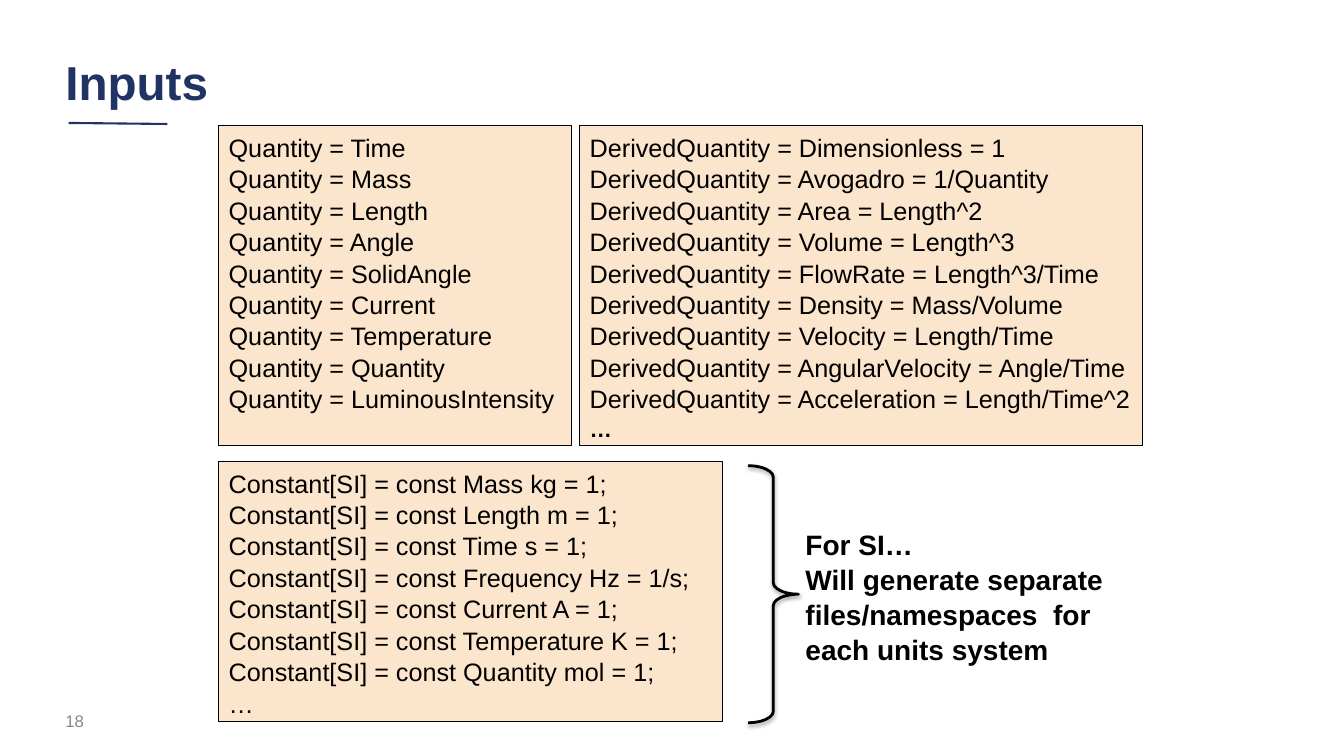
import pptx
import pptx.dml.color
import pptx.enum.shapes
import pptx.enum.text
import pptx.oxml
import pptx.oxml.ns
import pptx.util

PX = 9144
NAVY = pptx.dml.color.RGBColor(0x21, 0x32, 0x65)
PEACH = pptx.dml.color.RGBColor(0xFC, 0xE5, 0xCD)
BLACK = pptx.dml.color.RGBColor(0, 0, 0)
GRAY = pptx.dml.color.RGBColor(0x88, 0x88, 0x88)
SHAPES = pptx.enum.shapes.MSO_SHAPE
MIDDLE = pptx.enum.text.MSO_ANCHOR.MIDDLE
TOP = pptx.enum.text.MSO_ANCHOR.TOP
LINE_SPACING = 1.04
ELLIPSIS = "…"

QUANTITIES = ["Time", "Mass", "Length", "Angle", "SolidAngle", "Current",
              "Temperature", "Quantity", "LuminousIntensity"]
DERIVED_QUANTITIES = [
    "Dimensionless = 1", "Avogadro = 1/Quantity", "Area = Length^2",
    "Volume = Length^3", "FlowRate = Length^3/Time", "Density = Mass/Volume",
    "Velocity = Length/Time", "AngularVelocity = Angle/Time",
    "Acceleration = Length/Time^2"]
CONSTANTS = ["Mass kg = 1", "Length m = 1", "Time s = 1", "Frequency Hz = 1/s",
             "Current A = 1", "Temperature K = 1", "Quantity mol = 1"]
SI_NOTE = ["For SI…", "Will generate separate files/namespaces  for each units system"]


def scaled(*lengths):
    """Turn px lengths into EMU."""
    return [length * PX for length in lengths]


def write_lines(shape, lines, size, color=BLACK, bold=False, anchor=TOP, spacing=LINE_SPACING):
    """Fill a shape with one left-aligned paragraph per line."""
    frame = shape.text_frame
    frame.word_wrap = True
    frame.vertical_anchor = anchor
    frame.text = "\n".join(lines)
    for para in frame.paragraphs:
        para.alignment = pptx.enum.text.PP_ALIGN.LEFT
        para.line_spacing = spacing
        para.font.name = "Arial"
        para.font.size = pptx.util.Pt(size)
        para.font.bold = bold
        para.font.color.rgb = color
    return frame


def add_header(page, left, top, width, height):
    """Place the title and the short rule under it."""
    title = page.shapes.add_textbox(*scaled(left, top, width, height))
    write_lines(title, ["Inputs"], 34, NAVY, True, MIDDLE, 0.9)
    bottom = top + height
    rule = page.shapes.add_connector(
        pptx.enum.shapes.MSO_CONNECTOR.STRAIGHT,
        *scaled(left + 13, bottom, left + 111, bottom + 1))
    rule.line.color.rgb = NAVY
    rule.line.width = pptx.util.Pt(1.5)
    rule._element.spPr.append(pptx.oxml.parse_xml(
        f"<a:effectLst {pptx.oxml.ns.nsdecls('a')}/>"))


def add_page_number(page, left, top, width, height):
    """Place the page number."""
    number = page.shapes.add_textbox(*scaled(left, top, width, height))
    write_lines(number, ["18"], 12, GRAY, anchor=MIDDLE, spacing=1.0)


def add_code_panel(page, lines, left, top, width, height):
    """Place a peach panel of input lines."""
    panel = page.shapes.add_shape(SHAPES.RECTANGLE, *scaled(left, top, width, height))
    panel.shadow.inherit = False
    panel.fill.solid()
    panel.fill.fore_color.rgb = PEACH
    panel.line.color.rgb = BLACK
    panel.line.width = pptx.util.Pt(0.75)
    return write_lines(panel, lines, 18)


def add_si_note(page, left, top, width, height):
    """Place the brace and the note it points to."""
    brace = page.shapes.add_shape(SHAPES.RIGHT_BRACE, *scaled(left, top, 50, height))
    brace.adjustments[0] = 0.228
    brace.adjustments[1] = 0.5
    brace.fill.background()
    brace.line.color.rgb = BLACK
    brace.line.width = pptx.util.Pt(2)
    brace._element.spPr.append(pptx.oxml.parse_xml(
        f"<a:effectLst {pptx.oxml.ns.nsdecls('a')}>"
        '<a:outerShdw blurRad="39370" dist="20320" dir="5400000" rotWithShape="0">'
        '<a:srgbClr val="000000"><a:alpha val="38000"/></a:srgbClr>'
        "</a:outerShdw></a:effectLst>"))
    note = page.shapes.add_textbox(*scaled(left + 47, top + 55, width - 47, 145))
    write_lines(note, SI_NOTE, 20, bold=True)


def add_inputs_slide(deck):
    """Build the inputs slide."""
    page = deck.slides.add_slide(deck.slide_layouts[6])
    add_header(page, 55, 46, 1112, 76)
    add_page_number(page, 55, 695, 300, 40)
    add_code_panel(page, [f"Quantity = {name}" for name in QUANTITIES], 217, 125, 350, 317)
    derived = [f"DerivedQuantity = {rule}" for rule in DERIVED_QUANTITIES]
    frame = add_code_panel(page, derived + [ELLIPSIS], 575, 125, 558, 317)
    frame.paragraphs[-1].font.size = pptx.util.Pt(16)
    frame.paragraphs[-1].font.bold = True
    constants = [f"Constant[SI] = const {value};" for value in CONSTANTS]
    add_code_panel(page, constants + [ELLIPSIS], 217, 458, 500, 258)
    add_si_note(page, 742, 462, 409, 255)


def main():
    """Create and save the deck."""
    deck = pptx.Presentation()
    deck.slide_width, deck.slide_height = scaled(1333, 750)
    add_inputs_slide(deck)
    deck.save("out.pptx")


if __name__ == "__main__":
    main()
